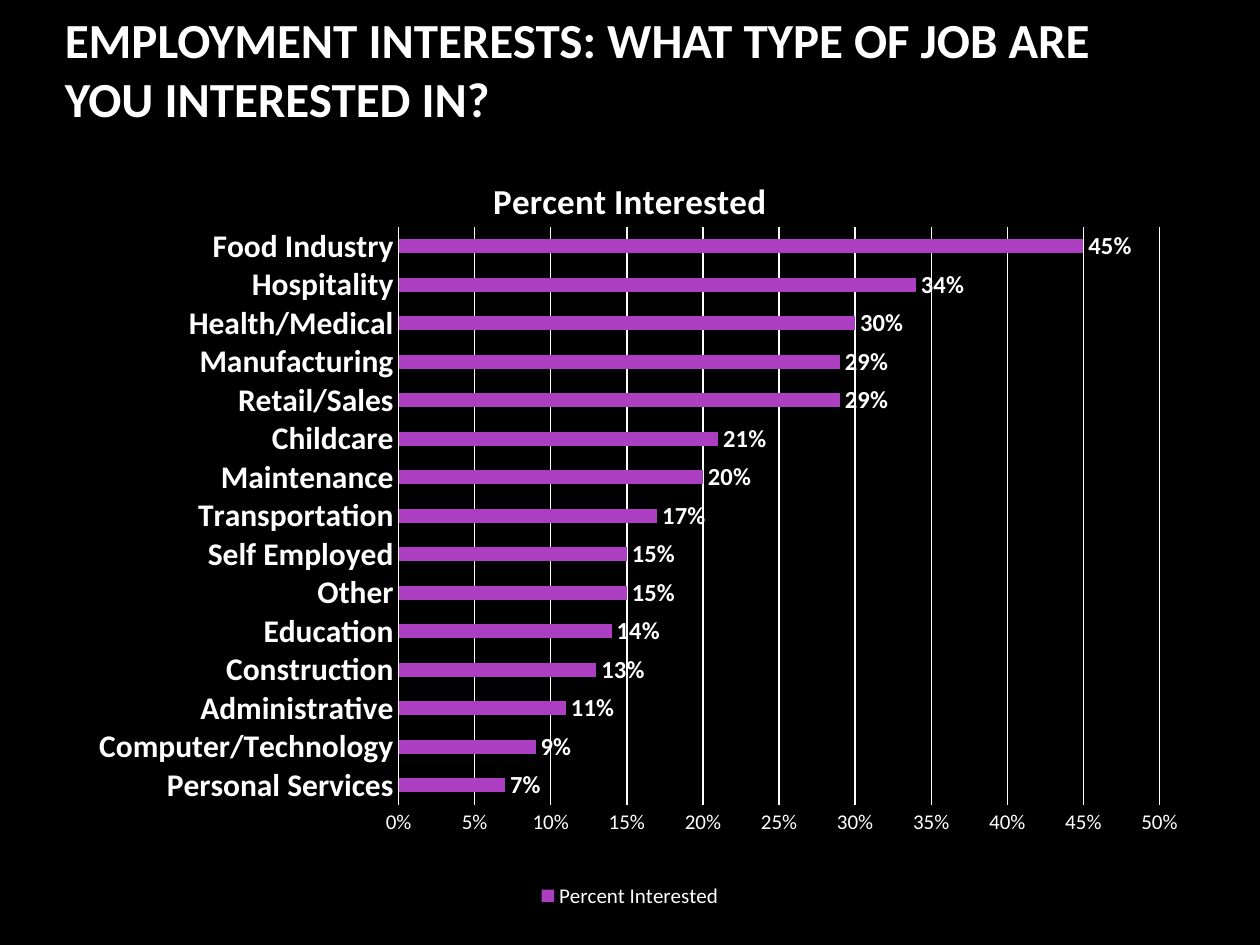
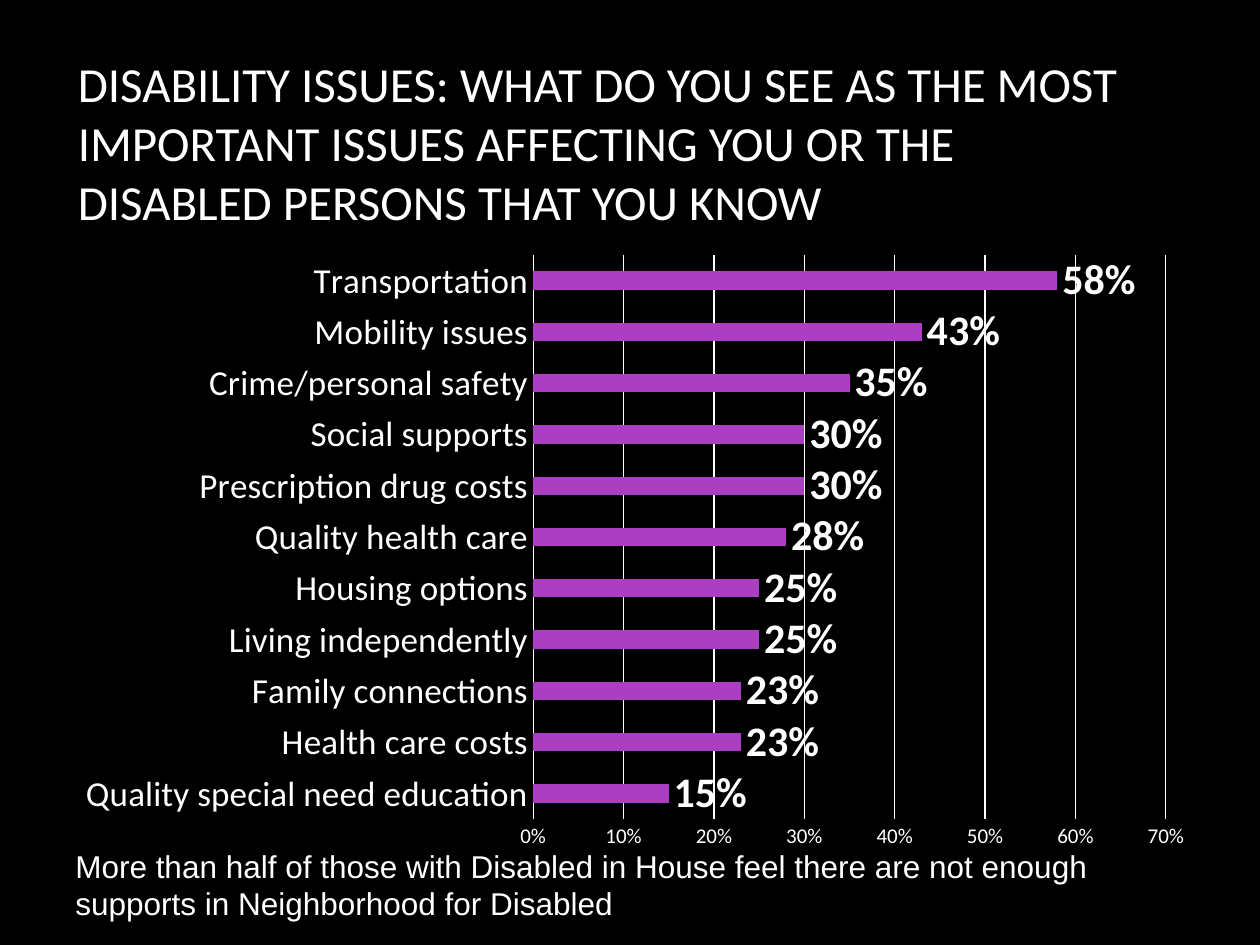
from dataclasses import dataclass
from typing import Any, NamedTuple

from lxml import etree
from pptx import Presentation
from pptx.chart.axis import CategoryAxis, ValueAxis
from pptx.chart.data import CategoryChartData
from pptx.dml.color import RGBColor
from pptx.enum.chart import XL_CHART_TYPE, XL_LABEL_POSITION, XL_LEGEND_POSITION, XL_TICK_MARK
from pptx.enum.text import MSO_ANCHOR
from pptx.oxml.ns import qn
from pptx.slide import Slide
from pptx.text.text import Font
from pptx.util import Pt

BAR_CLUSTERED = XL_CHART_TYPE.BAR_CLUSTERED
OUTSIDE_END = XL_LABEL_POSITION.OUTSIDE_END
LEGEND_BOTTOM = XL_LEGEND_POSITION.BOTTOM
NO_TICK = XL_TICK_MARK.NONE
MIDDLE, TOP = MSO_ANCHOR.MIDDLE, MSO_ANCHOR.TOP

BLACK = RGBColor(0x00, 0x00, 0x00)
WHITE = RGBColor(0xFF, 0xFF, 0xFF)
PURPLE = RGBColor(0xAC, 0x3E, 0xC1)

HEADING_FONT = "Calibri"
NOTE_FONT = "Arial"
BAR_GAP = 182
RULE_WIDTH = Pt(0.75)


class Box(NamedTuple):
    left: float
    top: float
    width: float
    height: float


class Answer(NamedTuple):
    label: str
    percent: int


@dataclass(frozen=True)
class Caption:
    text: str
    box: Box
    size: float
    bold: bool = False
    typeface: str = HEADING_FONT
    anchor: Any = MIDDLE


@dataclass(frozen=True)
class SurveyChart:
    series_name: str
    box: Box
    plot_area: Box
    answers: tuple[Answer, ...]
    axis_top: float
    axis_step: float
    number_format: str
    category_size: float
    category_bold: bool
    label_size: float
    titled: bool


@dataclass(frozen=True)
class SurveySlide:
    captions: tuple[Caption, ...]
    chart: SurveyChart


EMPLOYMENT = SurveySlide(
    captions=(
        Caption(
            "EMPLOYMENT INTERESTS: WHAT TYPE OF JOB ARE YOU INTERESTED IN?",
            Box(30, -18, 612, 114.5), 28, bold=True,
        ),
    ),
    chart=SurveyChart(
        series_name="Percent Interested",
        box=Box(36, 84.2, 648, 437.8),
        plot_area=Box(0.296, 0.104, 0.671, 0.754),
        answers=(
            Answer("Personal Services", 7),
            Answer("Computer/Technology", 9),
            Answer("Administrative", 11),
            Answer("Construction", 13),
            Answer("Education", 14),
            Answer("Other", 15),
            Answer("Self Employed", 15),
            Answer("Transportation", 17),
            Answer("Maintenance", 20),
            Answer("Childcare", 21),
            Answer("Retail/Sales", 29),
            Answer("Manufacturing", 29),
            Answer("Health/Medical", 30),
            Answer("Hospitality", 34),
            Answer("Food Industry", 45),
        ),
        axis_top=0.5, axis_step=0.05, number_format="0%",
        category_size=18, category_bold=True, label_size=14, titled=True,
    ),
)

DISABILITY = SurveySlide(
    captions=(
        Caption(
            "DISABILITY ISSUES: WHAT DO YOU SEE AS THE MOST IMPORTANT ISSUES "
            "AFFECTING YOU OR THE DISABLED PERSONS THAT YOU KNOW",
            Box(37.4, 23.8, 612, 114.5), 28,
        ),
        Caption(
            "More than half of those with Disabled in House feel there are not "
            "enough supports in Neighborhood for Disabled",
            Box(36, 480.2, 635.8, 51), 18, typeface=NOTE_FONT, anchor=TOP,
        ),
    ),
    chart=SurveyChart(
        series_name="Series 1",
        box=Box(36, 139, 653.8, 353.5),
        plot_area=Box(0.411, 0.019, 0.553, 0.912),
        answers=(
            Answer("Quality special need education", 15),
            Answer("Health care costs", 23),
            Answer("Family connections", 23),
            Answer("Living independently", 25),
            Answer("Housing options", 25),
            Answer("Quality health care", 28),
            Answer("Prescription drug costs", 30),
            Answer("Social supports", 30),
            Answer("Crime/personal safety", 35),
            Answer("Mobility issues", 43),
            Answer("Transportation", 58),
        ),
        axis_top=0.7, axis_step=0.1, number_format="###0%",
        category_size=20, category_bold=False, label_size=24, titled=False,
    ),
)


def apply_format(target: Any, values: dict[str, Any]) -> None:
    for name, value in values.items():
        setattr(target, name, value)


def style_font(font: Font, size: float, bold: bool = False, typeface: str = HEADING_FONT) -> None:
    apply_format(font, {"size": Pt(size), "bold": bold, "name": typeface})
    font.color.rgb = WHITE


def in_points(box: Box) -> list[Pt]:
    return [Pt(length) for length in box]


def draw_caption(slide: Slide, caption: Caption) -> None:
    frame = slide.shapes.add_textbox(*in_points(caption.box)).text_frame
    apply_format(frame, {"word_wrap": True, "vertical_anchor": caption.anchor})
    run = frame.paragraphs[0].add_run()
    run.text = caption.text
    style_font(run.font, caption.size, caption.bold, caption.typeface)


def place_plot(chart: Any, area: Box) -> None:
    plot_area = chart.element.find(".//" + qn("c:plotArea"))
    for automatic in plot_area.findall(qn("c:layout")):
        plot_area.remove(automatic)
    layout = etree.Element(qn("c:layout"))
    manual = etree.SubElement(layout, qn("c:manualLayout"))
    settings = {"layoutTarget": "inner", "xMode": "edge", "yMode": "edge"}
    settings |= dict(zip("xywh", map(str, area)))
    for tag, value in settings.items():
        etree.SubElement(manual, qn(f"c:{tag}")).set("val", value)
    plot_area.insert(0, layout)


def style_category_axis(axis: CategoryAxis, survey: SurveyChart) -> None:
    apply_format(axis, {"major_tick_mark": NO_TICK, "minor_tick_mark": NO_TICK})
    style_font(axis.tick_labels.font, survey.category_size, survey.category_bold)
    axis.format.line.color.rgb = WHITE
    axis.format.line.width = RULE_WIDTH


def style_value_axis(axis: ValueAxis, survey: SurveyChart) -> None:
    apply_format(axis, {
        "major_tick_mark": NO_TICK,
        "minor_tick_mark": NO_TICK,
        "minimum_scale": 0,
        "maximum_scale": survey.axis_top,
        "major_unit": survey.axis_step,
        "has_major_gridlines": True,
    })
    apply_format(axis.tick_labels, {
        "number_format": survey.number_format,
        "number_format_is_linked": False,
    })
    style_font(axis.tick_labels.font, 12)
    axis.format.line.fill.background()
    gridline = axis.major_gridlines.format.line
    gridline.color.rgb = WHITE
    gridline.width = RULE_WIDTH


def draw_chart(slide: Slide, survey: SurveyChart) -> None:
    data = CategoryChartData(number_format=survey.number_format)
    data.categories = [answer.label for answer in survey.answers]
    data.add_series(survey.series_name, [answer.percent / 100 for answer in survey.answers])
    chart = slide.shapes.add_chart(BAR_CLUSTERED, *in_points(survey.box), data).chart
    style_font(chart.font, 10)
    apply_format(chart, {"has_title": survey.titled, "has_legend": survey.titled})
    if survey.titled:
        heading = chart.chart_title.text_frame.paragraphs[0].add_run()
        heading.text = survey.series_name
        style_font(heading.font, 20, True)
        chart.chart_title.include_in_layout = False
        apply_format(chart.legend, {"position": LEGEND_BOTTOM, "include_in_layout": False})
        style_font(chart.legend.font, 12)

    style_category_axis(chart.category_axis, survey)
    style_value_axis(chart.value_axis, survey)

    plot = chart.plots[0]
    apply_format(plot, {
        "gap_width": BAR_GAP,
        "vary_by_categories": False,
        "has_data_labels": True,
    })
    apply_format(plot.data_labels, {
        "show_value": True,
        "position": OUTSIDE_END,
        "number_format": survey.number_format,
        "number_format_is_linked": False,
    })
    style_font(plot.data_labels.font, survey.label_size, True)
    bars = plot.series[0]
    bars.invert_if_negative = False
    bars.format.fill.solid()
    bars.format.fill.fore_color.rgb = PURPLE
    place_plot(chart, survey.plot_area)


def main() -> None:
    deck = Presentation()
    apply_format(deck, {"slide_width": Pt(720), "slide_height": Pt(540)})
    blank_layout = deck.slide_layouts[6]
    for survey_slide in (EMPLOYMENT, DISABILITY):
        slide = deck.slides.add_slide(blank_layout)
        slide.background.fill.solid()
        slide.background.fill.fore_color.rgb = BLACK
        draw_chart(slide, survey_slide.chart)
        for caption in survey_slide.captions:
            draw_caption(slide, caption)
    deck.save("out.pptx")


if __name__ == "__main__":
    main()
